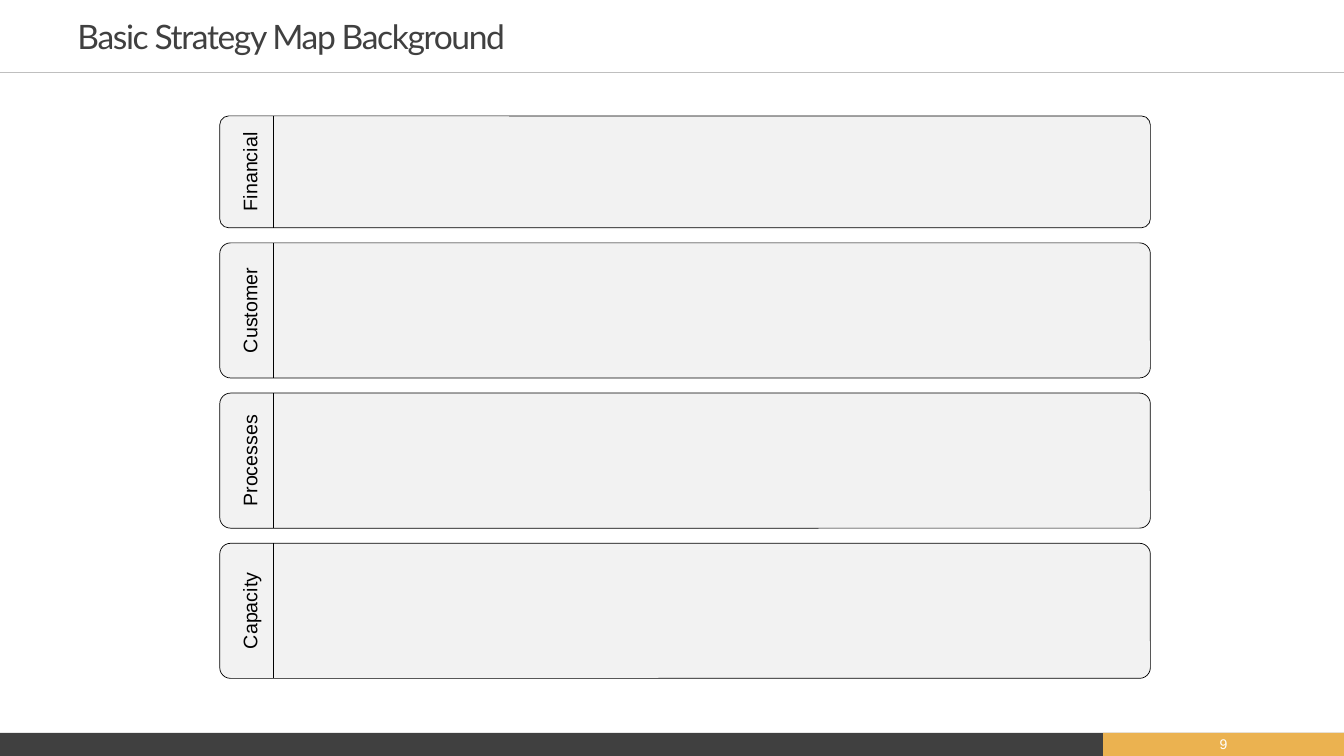
from pptx import Presentation
from pptx.dml.color import RGBColor
from pptx.enum.shapes import MSO_CONNECTOR, MSO_SHAPE
from pptx.enum.text import MSO_ANCHOR, PP_ALIGN
from pptx.oxml.ns import qn
from pptx.util import Inches, Pt
from lxml import etree

STRAIGHT = MSO_CONNECTOR.STRAIGHT
RECTANGLE, ROUNDED = MSO_SHAPE.RECTANGLE, MSO_SHAPE.ROUNDED_RECTANGLE
MIDDLE = MSO_ANCHOR.MIDDLE
LEFT, CENTER = PP_ALIGN.LEFT, PP_ALIGN.CENTER

BLACK = RGBColor(0x00, 0x00, 0x00)
WHITE = RGBColor(0xFF, 0xFF, 0xFF)
CHARCOAL = RGBColor(0x40, 0x40, 0x40)
RULE_GRAY = RGBColor(0xBF, 0xBF, 0xBF)
BAND_GRAY = RGBColor(0xF2, 0xF2, 0xF2)
GOLD = RGBColor(0xEB, 0xB2, 0x50)

COLUMNS, ROWS = 1333, 750
TITLE_FONT = {"name": "Lato", "size": Pt(24)}
LABEL_FONT = {"name": "Arial", "size": Pt(14)}
NUMBER_FONT = {"name": "Arial", "size": Pt(10)}

BAND_LEFT, BAND_WIDTH, BAND_TOP, BAND_GAP = 218, 923, 115, 15
DIVIDER_COLUMN = 271
LABEL_HEIGHT = 35
PERSPECTIVES = [("Financial", 111), ("Customer", 134),
                ("Processes", 134), ("Capacity", 134)]


class StrategySlide:
    """Places elements on a slide, measured in grid columns and rows."""

    def __init__(self, deck):
        self.slide = deck.slides.add_slide(deck.slide_layouts[6])
        self.column = deck.slide_width / COLUMNS
        self.row = deck.slide_height / ROWS

    def place(self, across, down):
        return round(across * self.column), round(down * self.row)

    def panel(self, kind, left, top, width, height, fill, outline=None):
        panel = self.slide.shapes.add_shape(
            kind, *self.place(left, top), *self.place(width, height))
        panel.shadow.inherit = False
        panel.fill.solid()
        panel.fill.fore_color.rgb = fill
        if outline is None:
            panel.line.fill.background()
        else:
            panel.line.color.rgb = outline
            panel.line.width = Pt(0.5)
        return panel

    def rule(self, start, end, color, weight):
        rule = self.slide.shapes.add_connector(
            STRAIGHT, *self.place(*start), *self.place(*end))
        rule.line.color.rgb = color
        rule.line.width = Pt(weight)
        etree.SubElement(rule._element.spPr, qn("a:effectLst"))

    def text(self, wording, left, top, width, height, font, color,
             align=CENTER, rotation=0, spacing=0):
        box = self.slide.shapes.add_textbox(
            *self.place(left, top), *self.place(width, height))
        box.rotation = rotation
        frame_format = {"word_wrap": True, "vertical_anchor": MIDDLE,
                        "margin_top": 0, "margin_bottom": 0}
        for name, value in frame_format.items():
            setattr(box.text_frame, name, value)
        paragraph = box.text_frame.paragraphs[0]
        paragraph.alignment = align
        run = paragraph.add_run()
        run.text = wording
        for name, value in font.items():
            setattr(run.font, name, value)
        run.font.color.rgb = color
        if spacing:
            run.font._element.set("spc", str(spacing))

    def band(self, perspective, top, height):
        """Rounded band with a divider and a label that reads upwards."""
        panel = self.panel(ROUNDED, BAND_LEFT, top, BAND_WIDTH, height,
                           BAND_GRAY, BLACK)
        panel.adjustments[0] = 0.08
        self.rule((DIVIDER_COLUMN, top), (DIVIDER_COLUMN, top + height),
                  BLACK, 0.5)
        label_center = (BAND_LEFT + DIVIDER_COLUMN) / 2 + 3
        self.text(perspective, label_center - height / 2,
                  top + (height - LABEL_HEIGHT) / 2, height, LABEL_HEIGHT,
                  LABEL_FONT, BLACK, rotation=270)


def main():
    deck = Presentation()
    deck.slide_width, deck.slide_height = Inches(13.33), Inches(7.5)
    page = StrategySlide(deck)

    page.panel(RECTANGLE, 0, 727, COLUMNS, 23, CHARCOAL)
    page.rule((0, 72), (COLUMNS, 72), RULE_GRAY, 1)
    page.panel(RECTANGLE, 1094, 727, 239, 23, GOLD)
    page.text("9", 1094, 726, 239, 24, NUMBER_FONT, WHITE)
    page.text("Basic Strategy Map Background", 67, 4, 972, 63,
              TITLE_FONT, CHARCOAL, align=LEFT, spacing=-100)

    top = BAND_TOP
    for perspective, height in PERSPECTIVES:
        page.band(perspective, top, height)
        top += height + BAND_GAP

    deck.save("out.pptx")


if __name__ == "__main__":
    main()
